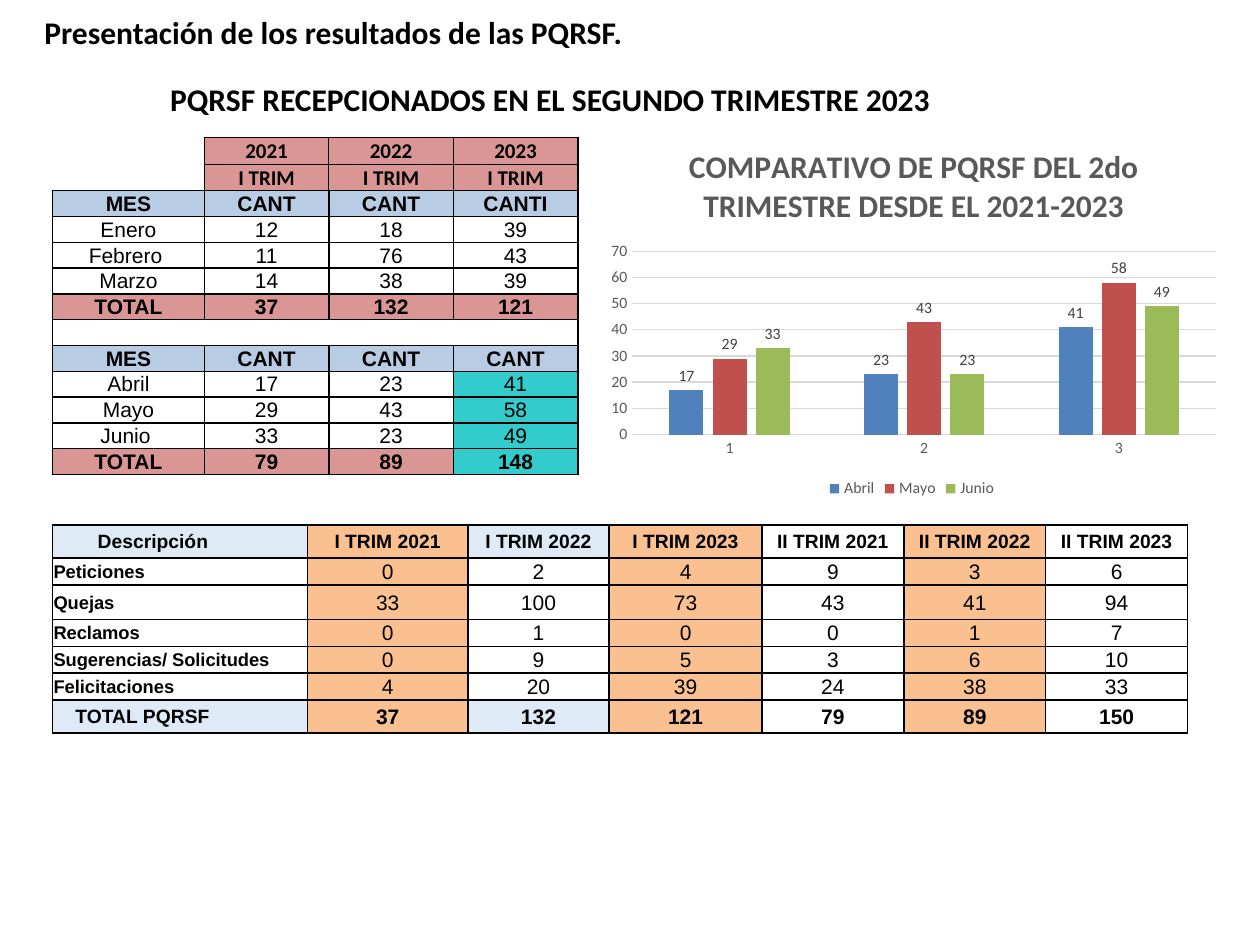
from lxml.etree import SubElement
from pptx import Presentation
from pptx.chart.data import CategoryChartData
from pptx.dml.color import RGBColor
from pptx.enum.chart import XL_CHART_TYPE as ChartType
from pptx.enum.chart import XL_LABEL_POSITION as LabelPosition
from pptx.enum.chart import XL_LEGEND_POSITION as LegendPosition
from pptx.enum.chart import XL_TICK_MARK as TickMark
from pptx.enum.text import MSO_ANCHOR as Anchor
from pptx.enum.text import MSO_AUTO_SIZE as AutoSize
from pptx.enum.text import PP_ALIGN as Align
from pptx.oxml.ns import qn
from pptx.util import Cm, Pt

BLACK = RGBColor(0x00, 0x00, 0x00)
WHITE = RGBColor(0xFF, 0xFF, 0xFF)
ROSE = RGBColor(0xDA, 0x96, 0x94)
BLUE = RGBColor(0xB8, 0xCC, 0xE4)
TEAL = RGBColor(0x33, 0xCC, 0xCC)
PALE = RGBColor(0xDE, 0xEB, 0xF7)
ORANGE = RGBColor(0xFA, 0xC0, 0x90)
GRAY = RGBColor(0x59, 0x59, 0x59)
DARK_GRAY = RGBColor(0x40, 0x40, 0x40)
GRID = RGBColor(0xD9, 0xD9, 0xD9)
MONTH_COLORS = [RGBColor(0x4F, 0x81, 0xBD), RGBColor(0xC0, 0x50, 0x4D),
                RGBColor(0x9B, 0xBB, 0x59)]

FIRST_QUARTER = [("Enero", 12, 18, 39), ("Febrero ", 11, 76, 43), ("Marzo", 14, 38, 39)]
SECOND_QUARTER = [("Abril", 17, 23, 41), ("Mayo", 29, 43, 58), ("Junio ", 33, 23, 49)]
MONTHLY = [
    ("", 2021, 2022, 2023),
    ("", "I TRIM", "I TRIM", "I TRIM"),
    ("MES", "CANT", "CANT", "CANTI"),
    *FIRST_QUARTER,
    ("TOTAL", 37, 132, 121),
    ("", "", "", ""),
    ("MES", "CANT", "CANT", "CANT"),
    *SECOND_QUARTER,
    ("TOTAL", 79, 89, 148),
]
BY_TYPE = [
    ("Descripción", "I TRIM 2021", "I TRIM 2022", "I TRIM 2023",
     "II TRIM 2021", "II TRIM 2022", "II TRIM 2023"),
    ("Peticiones", 0, 2, 4, 9, 3, 6),
    ("Quejas", 33, 100, 73, 43, 41, 94),
    ("Reclamos", 0, 1, 0, 0, 1, 7),
    ("Sugerencias/ Solicitudes", 0, 9, 5, 3, 6, 10),
    ("Felicitaciones", 4, 20, 39, 24, 38, 33),
    ("TOTAL PQRSF", 37, 132, 121, 79, 89, 150),
]


class ReportSlide:
    """Holds the report style and the slide being filled."""

    def __init__(self, slide):
        self.slide = slide
        self.heading_font = "Calibri"
        self.table_font = "Arial"

    def style(self, font, size, color=BLACK, bold=False, name=None):
        font.name = name or self.heading_font
        font.size = Pt(size)
        font.bold = bold
        font.color.rgb = color

    def heading(self, shape, text, left, top, width, height):
        shape.left, shape.top = Cm(left), Cm(top)
        shape.width, shape.height = Cm(width), Cm(height)
        frame = shape.text_frame
        frame.word_wrap = True
        frame.auto_size = AutoSize.NONE
        frame.vertical_anchor = Anchor.BOTTOM
        paragraph = frame.paragraphs[0]
        paragraph.alignment = Align.LEFT
        run = paragraph.add_run()
        run.text = text
        self.style(run.font, 18, bold=True)

    def title(self, text, *place):
        self.heading(self.slide.shapes.title, text, *place)

    def subtitle(self, text, *place):
        self.heading(self.slide.shapes.add_textbox(0, 0, 0, 0), text, *place)

    def borders(self, cell, widths):
        properties = cell._tc.get_or_add_tcPr()
        for side, width in zip("LRTB", widths):
            line = SubElement(properties, qn(f"a:ln{side}"), w=str(Pt(width)))
            if width:
                fill = SubElement(line, qn("a:solidFill"))
                SubElement(fill, qn("a:srgbClr"), val=str(BLACK))
            else:
                SubElement(line, qn("a:noFill"))

    def cell(self, cell, text, fill, size, bold, name, align, indent, widths):
        self.borders(cell, widths)
        if fill is None:
            cell.fill.background()
        else:
            cell.fill.solid()
            cell.fill.fore_color.rgb = fill
        cell.vertical_anchor = Anchor.MIDDLE
        cell.margin_left = Cm(indent)
        cell.margin_right = cell.margin_top = Cm(0.02)
        cell.margin_bottom = 0
        paragraph = cell.text_frame.paragraphs[0]
        paragraph.alignment = align
        if text == "":
            SubElement(paragraph._p, qn("a:endParaRPr"), sz="1000")
            return
        run = paragraph.add_run()
        run.text = str(text)
        self.style(run.font, size, bold=bold, name=name)

    def table(self, records, left, top, widths, heights, look):
        table = self.slide.shapes.add_table(
            len(records), len(widths), Cm(left), Cm(top),
            Cm(sum(widths)), Cm(sum(heights))).table
        table.first_row = table.horz_banding = False
        for column, width in zip(table.columns, widths):
            column.width = Cm(width)
        for row, height in zip(table.rows, heights):
            row.height = Cm(height)
        for r, record in enumerate(records):
            for c, value in enumerate(record):
                details = {"size": 12, "bold": False, "name": self.table_font,
                           "align": Align.CENTER, "indent": 0.02,
                           "fill": None, "widths": (1, 1, 1, 1)}
                details.update(look(r, c, record[0]))
                self.cell(table.cell(r, c), value, **details)
        return table

    def axis(self, axis):
        axis.major_tick_mark = axis.minor_tick_mark = TickMark.NONE
        self.style(axis.tick_labels.font, 9, GRAY)

    def column_chart(self, title, categories, records, colors, left, top, width, height):
        data = CategoryChartData()
        data.categories = categories
        for name, *values in records:
            data.add_series(name, values)
        chart = self.slide.shapes.add_chart(
            ChartType.COLUMN_CLUSTERED, Cm(left), Cm(top), Cm(width), Cm(height), data).chart
        self.style(chart.font, 10)
        chart.has_title = True
        run = chart.chart_title.text_frame.paragraphs[0].add_run()
        run.text = title
        self.style(run.font, 18, GRAY, bold=True)
        chart.chart_title.include_in_layout = False
        chart.has_legend = True
        chart.legend.position = LegendPosition.BOTTOM
        chart.legend.include_in_layout = False
        self.style(chart.legend.font, 9, GRAY)

        self.axis(chart.category_axis)
        chart.category_axis.format.line.color.rgb = GRID
        chart.category_axis.format.line.width = Pt(0.75)
        scale = chart.value_axis
        self.axis(scale)
        scale.minimum_scale, scale.maximum_scale, scale.major_unit = 0, 70, 10
        scale.format.line.fill.background()
        scale.major_gridlines.format.line.color.rgb = GRID
        scale.major_gridlines.format.line.width = Pt(0.75)

        plot = chart.plots[0]
        plot.vary_by_categories = False
        plot.gap_width, plot.overlap = 219, -27
        for series, color in zip(plot.series, colors):
            series.format.fill.solid()
            series.format.fill.fore_color.rgb = color
            labels = series.data_labels
            labels.show_value = True
            labels.position = LabelPosition.OUTSIDE_END
            self.style(labels.font, 9, DARK_GRAY)


def monthly_look(r, c, label):
    if r < 2:
        if c == 0:
            return {"widths": (0, 1, 0, r)}
        return {"fill": ROSE, "bold": True, "name": "Calibri",
                "widths": (1 if c == 1 else 0.5, 1 if c == 3 else 0.5,
                           1 if r == 0 else 0.5, 0.5)}
    if r > 8 and c == 3:
        return {"fill": TEAL, "bold": label == "TOTAL"}
    fill = {"MES": BLUE, "TOTAL": ROSE}.get(label)
    return {"fill": fill, "bold": fill is not None}


def type_look(r, c, label):
    edge = r in (0, len(BY_TYPE) - 1)
    fills = [PALE if edge else None, ORANGE, PALE if edge else None,
             ORANGE, WHITE, ORANGE, WHITE]
    look = {"fill": fills[c], "bold": edge or c == 0, "size": 11 if r == 0 else 12}
    if c == 0:
        look.update(size=11 if edge else 10.5, align=Align.LEFT,
                    indent={"Descripción": 0.91, "TOTAL PQRSF": 0.46}.get(label, 0.02))
    return look


def main():
    deck = Presentation()
    deck.slide_width, deck.slide_height = Cm(25.4), Cm(19.05)
    report = ReportSlide(deck.slides.add_slide(deck.slide_layouts[5]))
    report.title("Presentación de los resultados de las PQRSF.", 0.64, -0.64, 13.97, 1.8)
    report.subtitle("PQRSF RECEPCIONADOS EN EL SEGUNDO TRIMESTRE 2023", 3.18, 1.47, 15.88, 1.03)
    report.table(BY_TYPE, 1.06, 10.58, [5.14, 3.23, 2.85, 3.08] + [2.86] * 3,
                 [0.67, 0.54, 0.7, 0.54, 0.54, 0.54, 0.67], type_look)
    monthly = report.table(MONTHLY, 1.06, 2.77, [3.06] + [2.51] * 3,
                           [0.52] * len(MONTHLY), monthly_look)
    monthly.cell(7, 0).merge(monthly.cell(7, 3))
    report.column_chart("COMPARATIVO DE PQRSF DEL 2do TRIMESTRE DESDE EL 2021-2023",
                        ["1", "2", "3"], SECOND_QUARTER, MONTH_COLORS,
                        12.07, 2.52, 12.7, 7.62)
    deck.save("out.pptx")


if __name__ == "__main__":
    main()
